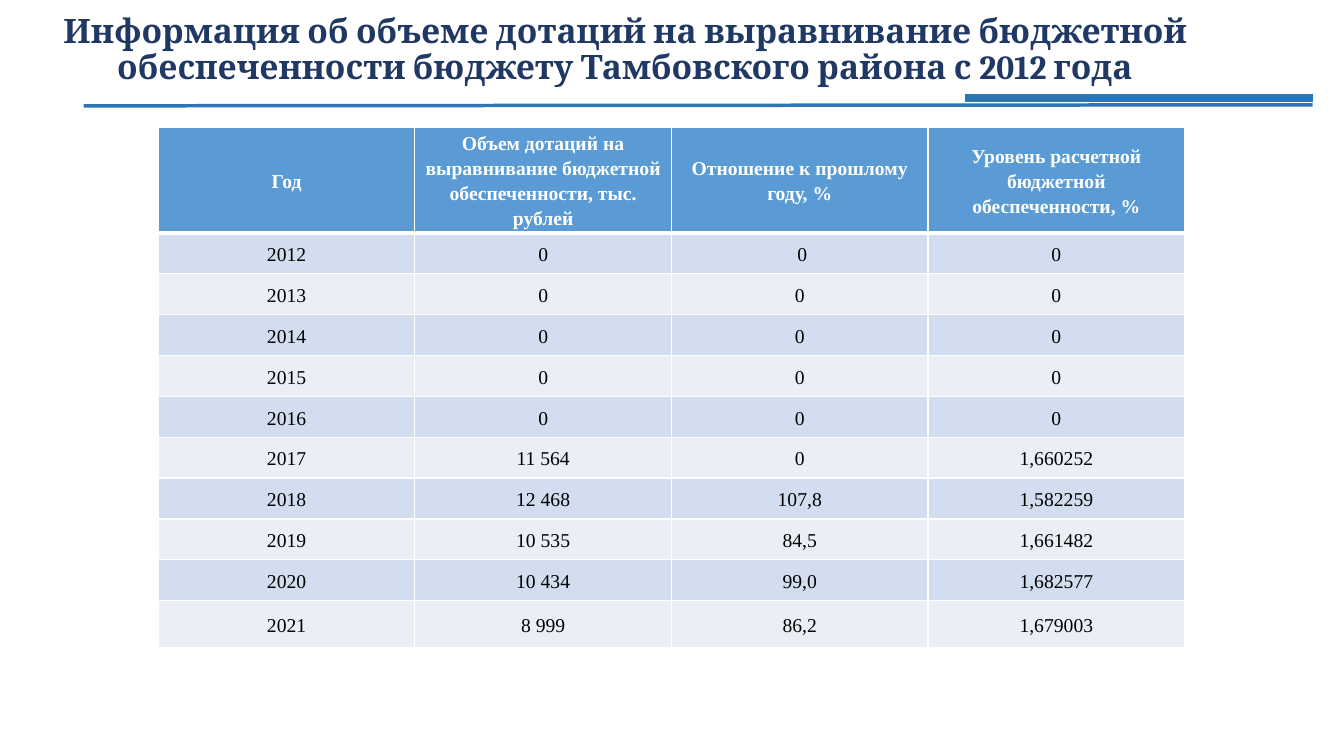
import pptx
import pptx.dml.color
import pptx.enum.shapes
import pptx.enum.text
import pptx.oxml.ns
import pptx.util
from lxml import etree
from pptx.util import Inches

RGBColor = pptx.dml.color.RGBColor
NAVY = RGBColor(0x20, 0x38, 0x64)
RULE_BLUE = RGBColor(0x2E, 0x75, 0xB6)
HEADER_BLUE = RGBColor(0x5B, 0x9B, 0xD5)
BAND_DARK = RGBColor(0xD2, 0xDE, 0xEF)
BAND_LIGHT = RGBColor(0xEA, 0xEF, 0xF7)
WHITE = RGBColor(0xFF, 0xFF, 0xFF)
BLACK = RGBColor(0x00, 0x00, 0x00)

TITLE = ("Информация об объеме дотаций на выравнивание бюджетной "
         "обеспеченности бюджету Тамбовского района с 2012 года")
ROWS = [
    ("Год", "Объем дотаций на выравнивание бюджетной обеспеченности, тыс. рублей",
     "Отношение к прошлому году, %", "Уровень расчетной бюджетной обеспеченности, %"),
    ("2012", "0", " 0", "0"),
    ("2013", "0", "0", "0"),
    ("2014", "0", "0", "0"),
    ("2015", "0", "0", "0"),
    ("2016", "0", "0", "0"),
    ("2017", "11 564", "0", "1,660252"),
    ("2018", "12 468", "107,8", "1,582259"),
    ("2019", "10 535", "84,5", "1,661482"),
    ("2020", "10 434", "99,0", "1,682577"),
    ("2021", "8 999", "86,2", "1,679003"),
]


def format_text(tf, font, size, color, bold, spacing):
    p = tf.paragraphs[0]
    p.alignment = pptx.enum.text.PP_ALIGN.CENTER
    p.line_spacing = spacing
    f = p.runs[0].font
    f.name, f.size, f.bold = font, pptx.util.Pt(size), bold
    f.color.rgb = color


def set_title(s):
    sp = s.shapes.title
    sp.left, sp.top, sp.width, sp.height = map(Inches, (0.2, 0.02, 12, 0.96))
    tf = sp.text_frame
    tf.text = TITLE
    tf.word_wrap = True
    tf.auto_size = pptx.enum.text.MSO_AUTO_SIZE.NONE
    tf.vertical_anchor = pptx.enum.text.MSO_ANCHOR.MIDDLE
    format_text(tf, "Cambria", 24, NAVY, True, 0.9)


def add_border(cell, side, width):
    qn = pptx.oxml.ns.qn
    tc_pr = cell._tc.get_or_add_tcPr()
    ln = etree.SubElement(tc_pr, qn(f"a:ln{side}"), w=str(pptx.util.Pt(width)))
    fill = etree.SubElement(ln, qn("a:solidFill"))
    etree.SubElement(fill, qn("a:srgbClr"), val=str(WHITE))


def fill_cell(cell, text, row):
    header = row == 0
    cell.text = text
    cell.margin_left = cell.margin_right = Inches(0.07)
    cell.margin_top = cell.margin_bottom = 0
    cell.vertical_anchor = pptx.enum.text.MSO_ANCHOR.MIDDLE
    format_text(cell.text_frame, "Times New Roman", 14,
                WHITE if header else BLACK, header, 1.15)
    widths = {"L": 1, "R": 1, "T": 3 if row == 1 else 1, "B": 3 if header else 1}
    for side, width in widths.items():
        add_border(cell, side, width)
    cell.fill.solid()
    band = BAND_DARK if row % 2 else BAND_LIGHT
    cell.fill.fore_color.rgb = HEADER_BLUE if header else band


def add_grant_table(s):
    table = s.shapes.add_table(len(ROWS), len(ROWS[0]), Inches(1.57), Inches(1.26),
                               Inches(10.18), Inches(5.17)).table
    middle = len(ROWS) - 2
    heights = [Inches(1.05)] + [Inches(3.65) // middle] * middle + [Inches(0.47)]
    for i, (values, height) in enumerate(zip(ROWS, heights)):
        table.rows[i].height = height
        for j, text in enumerate(values):
            fill_cell(table.cell(i, j), text, i)


def add_rule(s, x1, y1, x2, y2, width):
    line = s.shapes.add_connector(pptx.enum.shapes.MSO_CONNECTOR.STRAIGHT,
                                  Inches(x1), Inches(y1), Inches(x2), Inches(y2))
    line.line.color.rgb = RULE_BLUE
    line.line.width = pptx.util.Pt(width)
    etree.SubElement(line._element.spPr, pptx.oxml.ns.qn("a:effectLst"))


def main():
    """Build the slide on equalisation grants and save it."""
    prs = pptx.Presentation()
    prs.slide_width, prs.slide_height = Inches(13.33), Inches(7.5)
    s = prs.slides.add_slide(prs.slide_layouts[5])
    set_title(s)
    add_grant_table(s)
    add_rule(s, 0.83, 1.05, 13.02, 1.04, 2.5)
    add_rule(s, 9.57, 0.97, 13.02, 0.97, 6)
    prs.save("out.pptx")


if __name__ == "__main__":
    main()
